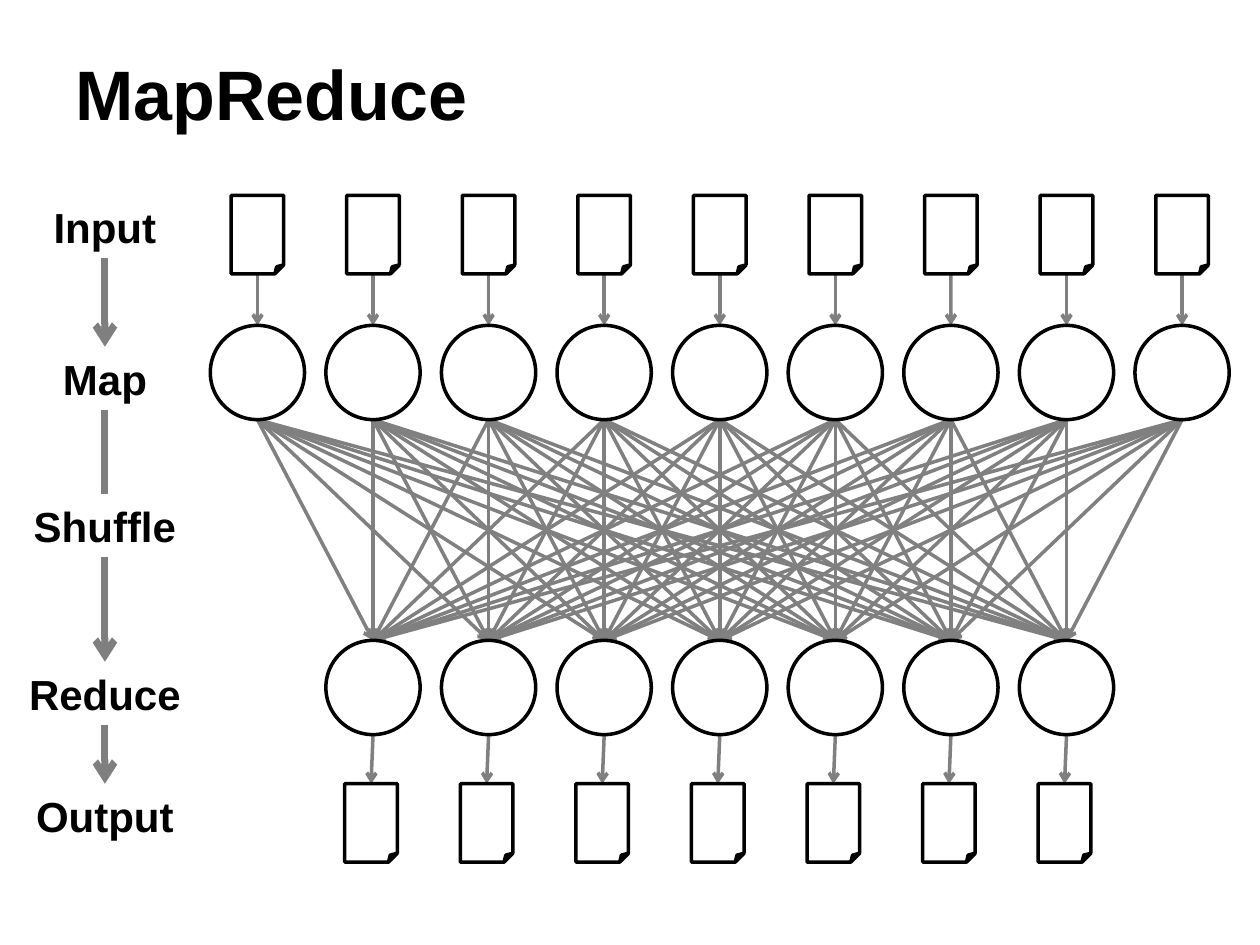
from dataclasses import dataclass

from lxml import etree
from pptx import Presentation
from pptx import util as u
from pptx.dml import color
from pptx.enum import shapes, text
from pptx.oxml import ns


@dataclass(frozen=True)
class Theme:
    """Colours, font and point sizes of the slide."""
    ink: color.RGBColor = color.RGBColor(0, 0, 0)
    paper: color.RGBColor = color.RGBColor(255, 255, 255)
    flow: color.RGBColor = color.RGBColor(128, 128, 128)
    stage_flow: color.RGBColor = color.RGBColor(127, 127, 127)
    font: str = "Arial"
    title_size: int = 40
    label_size: int = 24
    line: int = 2
    stage_line: int = 4


@dataclass(frozen=True)
class Box:
    """A region in centimetres."""
    left: float
    top: float
    width: float
    height: float

    @property
    def center(self):
        """Return the horizontal centre."""
        return self.left + self.width / 2

    @property
    def bottom(self):
        """Return the lower edge."""
        return self.top + self.height

    def lengths(self):
        """Return the region as slide lengths."""
        return [u.Cm(value) for value in (self.left, self.top, self.width, self.height)]


THEME = Theme()
PITCH = 2.33
MAPPERS = 9
REDUCERS = 7
LABEL_HEIGHT = 1.27


def add_label(slide, box, words, size, align, anchor):
    """Add a bold text box."""
    label = slide.shapes.add_textbox(*box.lengths())
    frame = label.text_frame
    frame.word_wrap = True
    frame.vertical_anchor = anchor
    frame.text = words
    paragraph = frame.paragraphs[0]
    paragraph.alignment = align
    font = paragraph.runs[0].font
    font.name, font.size, font.bold = THEME.font, u.Pt(size), True
    font.color.rgb = THEME.ink
    return label


def add_arrow(slide, start, end, ink, width):
    """Add a straight arrow between two points in centimetres."""
    points = [u.Cm(value) for value in (*start, *end)]
    arrow = slide.shapes.add_connector(shapes.MSO_CONNECTOR.STRAIGHT, *points)
    arrow.line.color.rgb = ink
    arrow.line.width = u.Pt(width)
    properties = arrow._element.spPr
    etree.SubElement(properties.find(ns.qn("a:ln")), ns.qn("a:tailEnd"), type="arrow")
    etree.SubElement(properties, ns.qn("a:effectLst"))


def add_flows(slide, pairs):
    """Add a thin arrow for each pair of points."""
    for start, end in pairs:
        add_arrow(slide, start, end, THEME.flow, THEME.line)


def row_boxes(first, count):
    """Repeat the first box across a row."""
    return [Box(first.left + index * PITCH, first.top, first.width, first.height)
            for index in range(count)]


def add_row(slide, boxes, kind):
    """Add one outlined shape in each box."""
    for box in boxes:
        shape = slide.shapes.add_shape(kind, *box.lengths())
        shape.shadow.inherit = False
        shape.fill.solid()
        shape.fill.fore_color.rgb = THEME.paper
        shape.line.color.rgb = THEME.ink
        shape.line.width = u.Pt(THEME.line)


def add_title(slide, box):
    """Add the slide title."""
    add_label(slide, box, "MapReduce", THEME.title_size,
              text.PP_ALIGN.LEFT, text.MSO_ANCHOR.TOP)


def add_network(slide, box):
    """Add files and workers joined by data flows."""
    circle, page_width, page_height = 1.9, 1.06, 1.58
    inset = (circle - page_width) / 2
    mappers = row_boxes(Box(box.left, box.top + 2.62, circle, circle), MAPPERS)
    reducers = row_boxes(Box(box.left + PITCH, box.top + 8.97, circle, circle), REDUCERS)
    inputs = row_boxes(Box(box.left + inset, box.top, page_width, page_height), MAPPERS)
    outputs = row_boxes(Box(box.left + PITCH + inset - 0.04, box.bottom - page_height,
                            page_width, page_height), REDUCERS)
    links = [(mapper, reducer) for mapper in mappers for reducer in reducers]
    links += [*zip(reducers, outputs), *zip(inputs, mappers)]
    add_flows(slide, [((source.center, source.bottom), (target.center, target.top))
                      for source, target in links])
    for workers in (mappers, reducers):
        add_row(slide, workers, shapes.MSO_SHAPE.OVAL)
    for files in (inputs, outputs):
        add_row(slide, files, shapes.MSO_SHAPE.FOLDED_CORNER)


def add_stages(slide, box):
    """Add the stage names with arrows between them."""
    offsets = {"Input": 0, "Map": 3.05, "Reduce": 9.4, "Output": 11.86, "Shuffle": 6.02}
    stages = {name: Box(box.left, box.top + offset, box.width, LABEL_HEIGHT)
              for name, offset in offsets.items()}
    for source, target in (("Input", "Map"), ("Map", "Reduce"), ("Reduce", "Output")):
        add_arrow(slide, (box.center, stages[source].bottom),
                  (box.center, stages[target].top), THEME.stage_flow, THEME.stage_line)
    for name, place in stages.items():
        label = add_label(slide, place, name, THEME.label_size,
                          text.PP_ALIGN.CENTER, text.MSO_ANCHOR.MIDDLE)
        if name == "Shuffle":
            label.fill.solid()
            label.fill.fore_color.rgb = THEME.paper


def main():
    """Build and save the slide."""
    presentation = Presentation()
    presentation.slide_width, presentation.slide_height = u.Cm(25.4), u.Cm(19.05)
    slide = presentation.slides.add_slide(presentation.slide_layouts[6])
    add_title(slide, Box(1.27, 0.9, 22.86, 2.9))
    add_network(slide, Box(4.24, 3.94, 20.54, 13.44))
    add_stages(slide, Box(0, 3.94, 4.23, 13.13))
    presentation.save("out.pptx")


if __name__ == "__main__":
    main()
